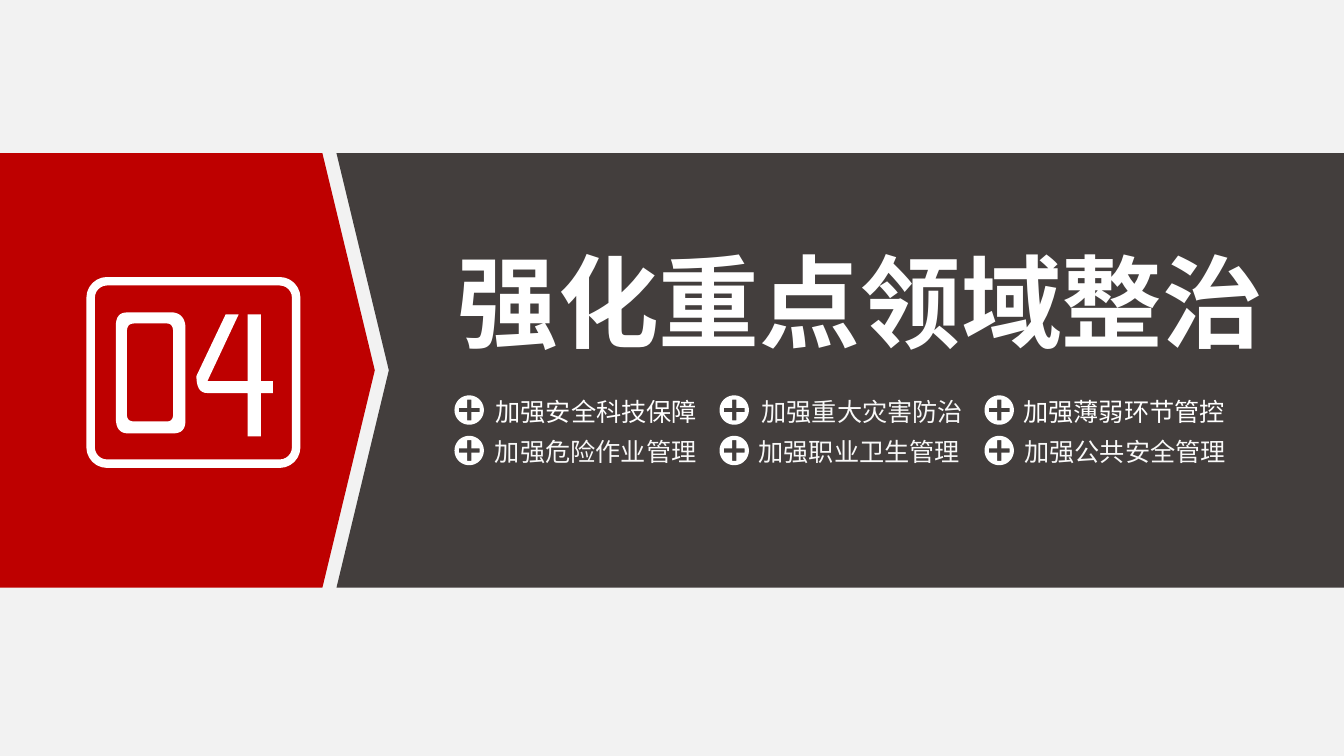
import math

import lxml.etree
import pptx
import pptx.dml.color
import pptx.enum.shapes
import pptx.enum.text
import pptx.oxml.ns
import pptx.util

Pt = pptx.util.Pt
FONT = "Noto Sans CJK SC"
COLORS = {"back": "F2F2F2", "red": "BE0000", "dark": "433E3D",
          "white": "FFFFFF", "soft": "F8F8F8"}

SLIDE_W, SLIDE_H = 960.48, 540
BAND_TOP, BAND_MID, BAND_BOTTOM = 109.44, 264.5, 419.76
ARROW_X, ARROW_DEPTH, ARROW_GAP = 230.4, 37.44, 10.08

# Digit contours: a pair is a line end, six numbers are a cubic curve
ZERO = [
    [(82.8, 232.6), (82.8, 298.8), (82.8, 306, 85.7, 309.6, 91.4, 309.6),
     (123.8, 309.6), (129.6, 309.6, 132.5, 306.7, 132.5, 301),
     (132.5, 232.6), (131.8, 226.8, 128.9, 223.9, 123.8, 223.2),
     (90.7, 223.2), (85.7, 223.2, 82.8, 226.1, 82.8, 232.6)],
    [(119.5, 301), (95.8, 301), (92.2, 301, 90.7, 299.5, 90.7, 295.9),
     (90.7, 236.9), (90.7, 233.3, 92.2, 231.1, 95.8, 231.1),
     (119.5, 231.1), (122.4, 231.1, 123.8, 233.3, 123.8, 237.6),
     (123.8, 295.2), (123.8, 299.5, 122.4, 301, 119.5, 301)],
]
FOUR = [
    [(140.4, 268.6), (140.4, 276.5, 142.6, 280.8, 148.3, 280.8),
     (177.1, 280.8), (177.1, 311.8), (186.5, 311.8), (186.5, 280.8),
     (195.1, 280.8), (195.1, 272.2), (186.5, 272.2), (186.5, 224.6),
     (177.1, 224.6), (177.1, 272.2), (148.3, 272.2), (170.6, 224.6),
     (161.3, 224.6)],
]

# Topics by row: text, left, width, colour
TOPICS = [
    [("加强安全科技保障", 347, 169.2, "white"),
     ("加强重大灾害防治", 537.1, 172, "soft"),
     ("加强薄弱环节管控", 724.3, 203.8, "white")],
    [("加强危险作业管理", 346.6, 167, "soft"),
     ("加强职业卫生管理", 535, 167.8, "soft"),
     ("加强公共安全管理", 725, 167.8, "soft")],
]
BADGE_X, BADGE_Y, COL_STEP, ROW_STEP = 335.3, 292.9, 189.4, 28.9
TOPIC_TOP, TOPIC_H = 279.4, 28.8


def rgb(name):
    return pptx.dml.color.RGBColor.from_string(COLORS[name])


def flatten(contour, steps=8):
    """Turn line ends and cubic curves into plain points."""
    points = []
    for seg in contour:
        if len(seg) == 2:
            points.append(seg)
            continue
        ctrl = [points[-1], seg[:2], seg[2:4], seg[4:]]
        for i in range(1, steps + 1):
            t = i / steps
            weights = [math.comb(3, k) * t**k * (1 - t)**(3 - k)
                       for k in range(4)]
            points.append(tuple(sum(w * c[axis] for w, c in zip(weights, ctrl))
                                for axis in (0, 1)))
    return points


def add_outline(slide, contours, color):
    """Filled outline; a second contour cuts a hole."""
    fb = None
    for contour in contours:
        points = [(Pt(x), Pt(y)) for x, y in flatten(contour)]
        if fb is None:
            fb = slide.shapes.build_freeform(*points[0], scale=1.0)
        else:
            fb.move_to(*points[0])
        fb.add_line_segments(points[1:], close=True)
    sp = fb.convert_to_shape()
    sp.shadow.inherit = False
    sp.fill.solid()
    sp.fill.fore_color.rgb = rgb(color)
    sp.line.fill.background()


def add_text(slide, text, left, top, width, height, *, size, color="white",
             bold=False, inset=None):
    sp = slide.shapes.add_textbox(Pt(left), Pt(top), Pt(width), Pt(height))
    tf = sp.text_frame
    tf.word_wrap = True
    tf.vertical_anchor = pptx.enum.text.MSO_ANCHOR.MIDDLE
    if inset is not None:
        tf.margin_left = tf.margin_right = Pt(inset)
        tf.margin_top = tf.margin_bottom = Pt(inset)
    r = tf.paragraphs[0].add_run()
    r.text = text
    r.font.size = Pt(size)
    r.font.bold = bold
    r.font.color.rgb = rgb(color)
    r.font.name = FONT
    # East Asian typeface
    ea = lxml.etree.SubElement(r.font._element, pptx.oxml.ns.qn("a:ea"))
    ea.set("typeface", FONT)


def add_frame(slide, left, top, width, height):
    sp = slide.shapes.add_shape(
        pptx.enum.shapes.MSO_SHAPE.ROUNDED_RECTANGLE,
        Pt(left), Pt(top), Pt(width), Pt(height))
    sp.adjustments[0] = 0.09
    sp.shadow.inherit = False
    sp.fill.background()
    sp.line.color.rgb = rgb("white")
    sp.line.width = Pt(6)


def add_badge(slide, cx, cy, radius=10.5, arm=7.4, half=1.5):
    """Disc with a plus cut out of it."""
    angles = [math.tau * i / 60 for i in range(60)]
    disc = [(cx + radius * math.cos(a), cy + radius * math.sin(a))
            for a in angles]
    plus = []
    for c, s in ((1, 0), (0, 1), (-1, 0), (0, -1)):
        for x, y in ((arm, -half), (arm, half), (half, half)):
            plus.append((cx + x * c - y * s, cy + x * s + y * c))
    add_outline(slide, [disc, plus], "white")


def main():
    prs = pptx.Presentation()
    prs.slide_width, prs.slide_height = Pt(SLIDE_W), Pt(SLIDE_H)
    slide = prs.slides.add_slide(prs.slide_layouts[6])
    slide.background.fill.solid()
    slide.background.fill.fore_color.rgb = rgb("back")

    # Band: red arrow and dark panel with a matching edge
    def arrow_edge(x):
        return [(x, BAND_TOP), (x + ARROW_DEPTH, BAND_MID), (x, BAND_BOTTOM)]

    add_outline(slide, [[(0, BAND_TOP), *arrow_edge(ARROW_X),
                         (0, BAND_BOTTOM)]], "red")
    add_outline(slide, [[(SLIDE_W, BAND_TOP), *arrow_edge(ARROW_X + ARROW_GAP),
                         (SLIDE_W, BAND_BOTTOM)]], "dark")

    # Section number
    add_frame(slide, 64.8, 200.9, 146.9, 130.3)
    for digit in (ZERO, FOUR):
        add_outline(slide, digit, "white")

    # Title
    add_text(slide, "强化重点领域整治", 326.9, 170.6, 601.2, 87.1,
             size=72, bold=True, inset=0)

    # Topics
    for row, topics in enumerate(TOPICS):
        for col, (text, left, width, color) in enumerate(topics):
            add_badge(slide, BADGE_X + col * COL_STEP, BADGE_Y + row * ROW_STEP)
            add_text(slide, text, left, TOPIC_TOP + row * ROW_STEP,
                     width, TOPIC_H, size=18, color=color)

    prs.save("out.pptx")


if __name__ == "__main__":
    main()
